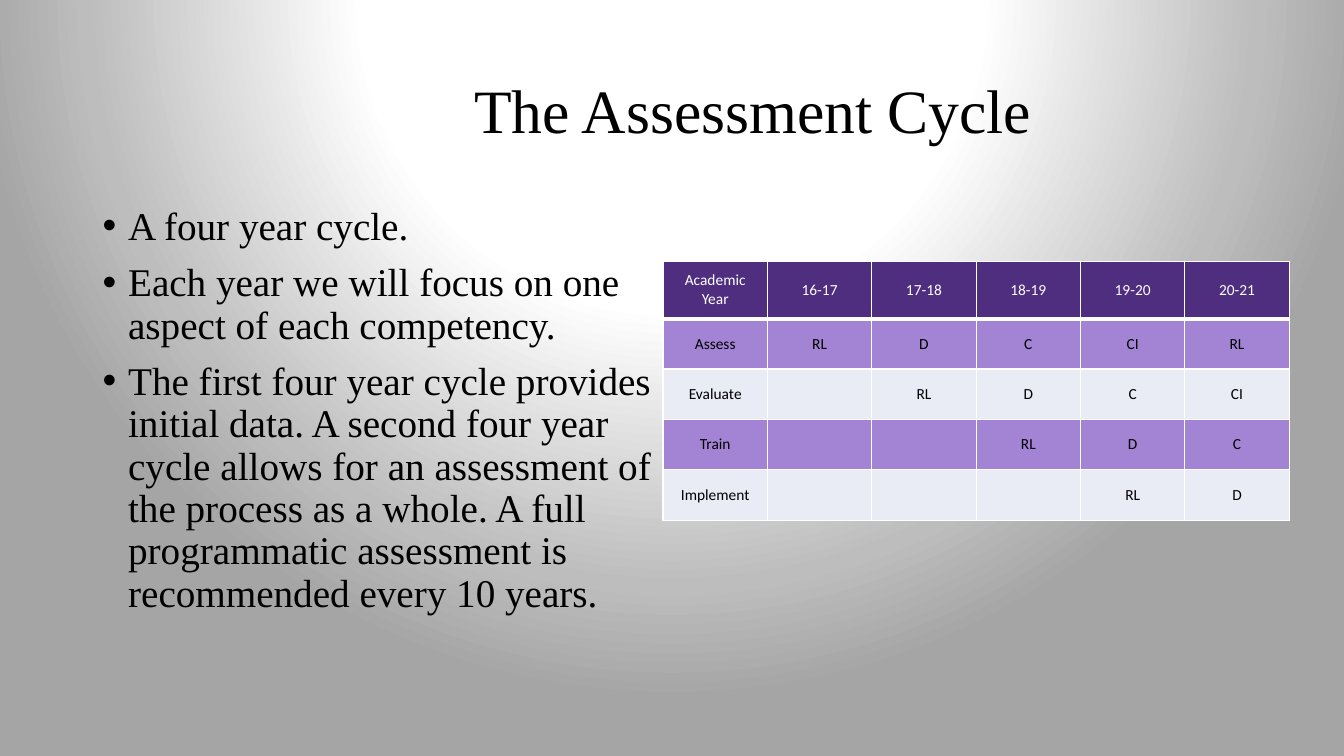
"""Build the slide on the four year assessment cycle."""
from lxml import etree
from pptx import Presentation
from pptx.dml.color import RGBColor
from pptx.enum.text import MSO_ANCHOR, PP_ALIGN
from pptx.oxml.ns import qn
from pptx.util import Cm, Pt

CENTER = PP_ALIGN.CENTER
MIDDLE = MSO_ANCHOR.MIDDLE
TOP = MSO_ANCHOR.TOP

POINTS = [
    "A four year cycle.",
    "Each year we will focus on one aspect of each competency.",
    "The first four year cycle provides initial data. A second four year cycle "
    "allows for an assessment of the process as a whole. A full programmatic "
    "assessment is recommended every 10 years.",
]
SCHEDULE = [
    ["Academic Year", "16-17", "17-18", "18-19", "19-20", "20-21"],
    ["Assess", "RL", "D", "C", "CI", "RL"],
    ["Evaluate", "", "RL", "D", "C", "CI"],
    ["Train", "", "", "RL", "D", "C"],
    ["Implement", "", "", "", "RL", "D"],
]


def color(value):
    return RGBColor.from_string(value)


def add_xml(parent, tag, **attributes):
    return etree.SubElement(parent, qn(tag), attributes)


class CycleSlide:
    """Hold the style and the current slide."""

    serif, sans = "Times New Roman", "Calibri"
    black, white = "000000", "FFFFFF"
    header, bands = "4F2D7F", ["A383D3", "E9EBF5"]
    glow = [(0, "FFFFFF"), (40, "FFFFFF"), (76, "BDBDBD"), (91, "A5A5A5")]

    def __init__(self, slide):
        self.slide = slide

    def background(self):
        self.slide.background.fill.gradient()
        gradient = self.slide.element.find(".//" + qn("a:gradFill"))
        for child in list(gradient):
            gradient.remove(child)
        stops = add_xml(gradient, "a:gsLst")
        for percent, value in self.glow:
            stop = add_xml(stops, "a:gs", pos=str(percent * 1000))
            add_xml(stop, "a:srgbClr", val=value)
        circle = add_xml(gradient, "a:path", path="circle")
        add_xml(circle, "a:fillToRect", l="50000", t="-80000", r="50000", b="180000")

    def style(self, paragraph, size, face, ink):
        for run in paragraph.runs:
            run.font.size = Pt(size)
            run.font.name = face
            run.font.color.rgb = color(ink)

    def text(self, lines, left, top, width, height, size, anchor=TOP, align=None, bullets=False):
        box = self.slide.shapes.add_textbox(Cm(left), Cm(top), Cm(width), Cm(height))
        frame = box.text_frame
        frame.word_wrap = True
        frame.vertical_anchor = anchor
        frame.text = "\n".join(lines)
        for index, paragraph in enumerate(frame.paragraphs):
            if bullets:
                self.bullet(paragraph)
            paragraph.alignment = align
            paragraph.line_spacing = 0.9
            paragraph.space_before = Pt(10 if index else 0)
            self.style(paragraph, size, self.serif, self.black)

    def bullet(self, paragraph):
        properties = paragraph._p.get_or_add_pPr()
        properties.set("marL", str(Cm(0.64)))
        properties.set("indent", str(Cm(-0.64)))
        add_xml(properties, "a:buFont", typeface="Arial")
        add_xml(properties, "a:buChar", char="•")

    def borders(self, cell, bottom):
        properties = cell._tc.get_or_add_tcPr()
        for side, weight in (("L", 1), ("R", 1), ("T", 1), ("B", bottom)):
            line = add_xml(properties, f"a:ln{side}", w=str(Pt(weight)))
            add_xml(add_xml(line, "a:solidFill"), "a:srgbClr", val=self.white)

    def table(self, rows, left, top, column, header_height, row_height):
        heights = [header_height] + [row_height] * (len(rows) - 1)
        count = len(rows[0])
        grid = self.slide.shapes.add_table(
            len(rows), count, Cm(left), Cm(top), Cm(column * count), Cm(sum(heights))
        ).table
        for each in grid.columns:
            each.width = Cm(column)
        for r, values in enumerate(rows):
            grid.rows[r].height = Cm(heights[r])
            fill = self.bands[(r - 1) % 2] if r else self.header
            for c, value in enumerate(values):
                cell = grid.cell(r, c)
                self.borders(cell, 1 if r else 3)
                cell.fill.solid()
                cell.fill.fore_color.rgb = color(fill)
                cell.vertical_anchor = MIDDLE
                cell.text_frame.text = value
                label = cell.text_frame.paragraphs[0]
                label.alignment = CENTER
                self.style(label, 11, self.sans, self.black if r else self.white)


def main():
    deck = Presentation()
    deck.slide_width, deck.slide_height = Cm(33.87), Cm(19.05)
    cycle = CycleSlide(deck.slides.add_slide(deck.slide_layouts[6]))
    cycle.background()
    cycle.text(["The Assessment Cycle"], 6.43, 1.02, 25.1, 3.68, 44, MIDDLE, CENTER)
    cycle.text(POINTS, 2.34, 5.08, 14.4, 12.09, 28, bullets=True)
    cycle.table(SCHEDULE, 16.71, 6.58, 2.63, 1.45, 1.27)
    deck.save("out.pptx")


if __name__ == "__main__":
    main()
